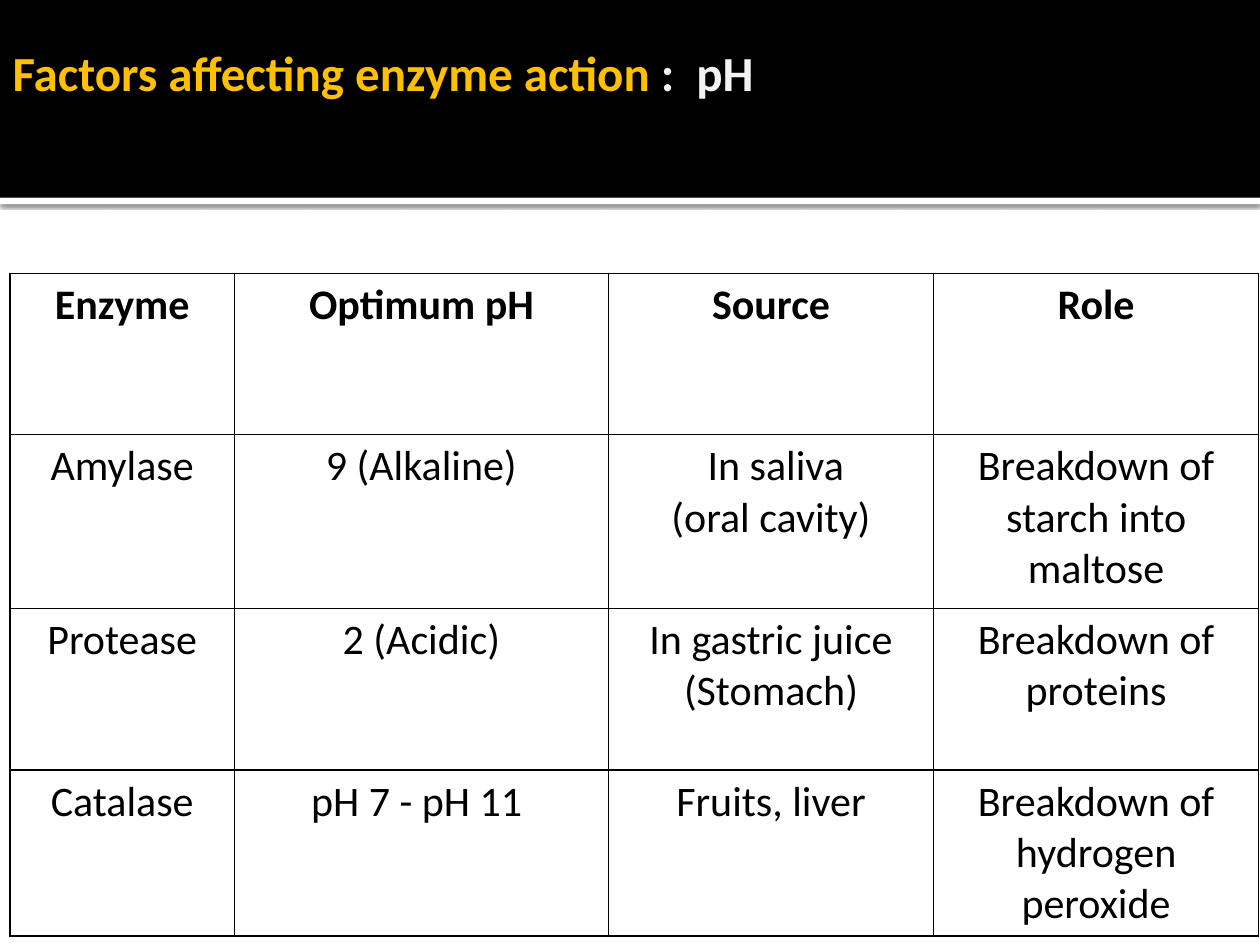
from dataclasses import dataclass

from lxml import etree
from pptx import Presentation
from pptx.dml.color import RGBColor
from pptx.enum.shapes import MSO_SHAPE
from pptx.enum.text import MSO_ANCHOR, MSO_AUTO_SIZE, PP_ALIGN
from pptx.oxml.ns import qn
from pptx.util import Inches, Pt

RECTANGLE = MSO_SHAPE.RECTANGLE
MIDDLE = MSO_ANCHOR.MIDDLE
LEFT, CENTER = PP_ALIGN.LEFT, PP_ALIGN.CENTER
NO_FIT = MSO_AUTO_SIZE.NONE
TITLE_ONLY = 5


@dataclass(frozen=True)
class Theme:
    font: str = "Calibri"
    title_size: int = 28
    table_size: int = 24
    black: str = "000000"
    white: str = "FFFFFF"
    accent: str = "FFC000"
    pale: str = "F2F2F2"
    border: int = 1


THEME = Theme()
PAGE_WIDTH, PAGE_HEIGHT = 10, 7.5
BAND_HEIGHT, RULE_HEIGHT = 1.57, 0.05
TABLE_LEFT, TABLE_TOP = 0.08, 2.17
COLUMNS = (1.78, 2.97, 2.58, 2.58)
ROWS = (1.28, 1.38, 1.28, 1.28)

# Each cell is a tuple of paragraphs
ENZYMES = (
    (("Enzyme",), ("Optimum pH",), ("Source",), ("Role",)),
    (("Amylase",), ("9 (Alkaline)",), (" In saliva", "(oral cavity)"),
     ("Breakdown of starch into maltose",)),
    (("Protease",), ("2 (Acidic)",), ("In gastric juice", "(Stomach)"),
     ("Breakdown of proteins",)),
    (("Catalase",), ("pH 7 - pH 11 ",), ("Fruits, liver",),
     ("Breakdown of hydrogen peroxide",)),
)


def add_span(para, text, size, color, bold):
    span = para.add_run()
    span.text = text
    span.font.name = THEME.font
    span.font.size = Pt(size)
    span.font.bold = bold
    span.font.color.rgb = RGBColor.from_string(color)


def add_band(page, top, height, color):
    """Add a full-width band behind the title."""
    band = page.shapes.add_shape(
        RECTANGLE, 0, Inches(top), Inches(PAGE_WIDTH), Inches(height))
    band.shadow.inherit = False
    band.fill.solid()
    band.fill.fore_color.rgb = RGBColor.from_string(color)
    band.line.fill.background()
    page.shapes.title.element.addprevious(band.element)
    return band


def add_shadow(band):
    """Cast a soft shadow straight down."""
    effects = band.element.spPr.find(qn("a:effectLst"))
    shadow = etree.SubElement(
        effects, qn("a:outerShdw"), blurRad=str(Pt(2.5)), dist=str(Pt(0.8)),
        dir=str(90 * 60000), algn="ctr", rotWithShape="0")
    color = etree.SubElement(shadow, qn("a:srgbClr"), val=THEME.black)
    etree.SubElement(color, qn("a:alpha"), val="60000")


def format_title(page):
    title = page.shapes.title
    title.left, title.top = 0, 0
    title.width, title.height = Inches(0.9 * PAGE_WIDTH), Inches(0.81)
    frame = title.text_frame
    frame.auto_size = NO_FIT
    frame.word_wrap = True
    frame.vertical_anchor = MIDDLE
    frame.margin_left = frame.margin_right = Inches(0.1)
    frame.margin_top = frame.margin_bottom = 0
    para = frame.paragraphs[0]
    para.alignment = LEFT
    para.line_spacing = 1.7
    para.space_before = Pt(0)
    add_span(para, "Factors affecting enzyme action ",
             THEME.title_size, THEME.accent, True)
    add_span(para, ":  pH", THEME.title_size, THEME.pale, True)


def add_borders(cell):
    properties = cell._tc.get_or_add_tcPr()
    for index, side in enumerate(("lnL", "lnR", "lnT", "lnB")):
        line = etree.Element(qn(f"a:{side}"), w=str(Pt(THEME.border)))
        fill = etree.SubElement(line, qn("a:solidFill"))
        etree.SubElement(fill, qn("a:srgbClr"), val=THEME.black)
        properties.insert(index, line)


def fill_cell(cell, lines, bold):
    cell.fill.background()
    add_borders(cell)
    frame = cell.text_frame
    for index, text in enumerate(lines):
        para = frame.add_paragraph() if index else frame.paragraphs[0]
        para.alignment = CENTER
        add_span(para, text, THEME.table_size, THEME.black, bold)


def add_enzyme_table(page):
    table = page.shapes.add_table(
        len(ROWS), len(COLUMNS), Inches(TABLE_LEFT), Inches(TABLE_TOP),
        Inches(sum(COLUMNS)), Inches(sum(ROWS))).table
    table.first_row = table.horz_banding = False
    for column, width in zip(table.columns, COLUMNS):
        column.width = Inches(width)
    for index, (row, height, contents) in enumerate(
            zip(table.rows, ROWS, ENZYMES)):
        row.height = Inches(height)
        for cell, lines in zip(row.cells, contents):
            fill_cell(cell, lines, bold=index == 0)


def main():
    deck = Presentation()
    deck.slide_width, deck.slide_height = Inches(PAGE_WIDTH), Inches(PAGE_HEIGHT)
    page = deck.slides.add_slide(deck.slide_layouts[TITLE_ONLY])
    page.background.fill.solid()
    page.background.fill.fore_color.rgb = RGBColor.from_string(THEME.white)

    # Header: white rule with a shadow, then the black band
    add_shadow(add_band(page, BAND_HEIGHT, RULE_HEIGHT, THEME.white))
    add_band(page, 0, BAND_HEIGHT, THEME.black)
    format_title(page)

    # Body
    add_enzyme_table(page)
    deck.save("out.pptx")


if __name__ == "__main__":
    main()
